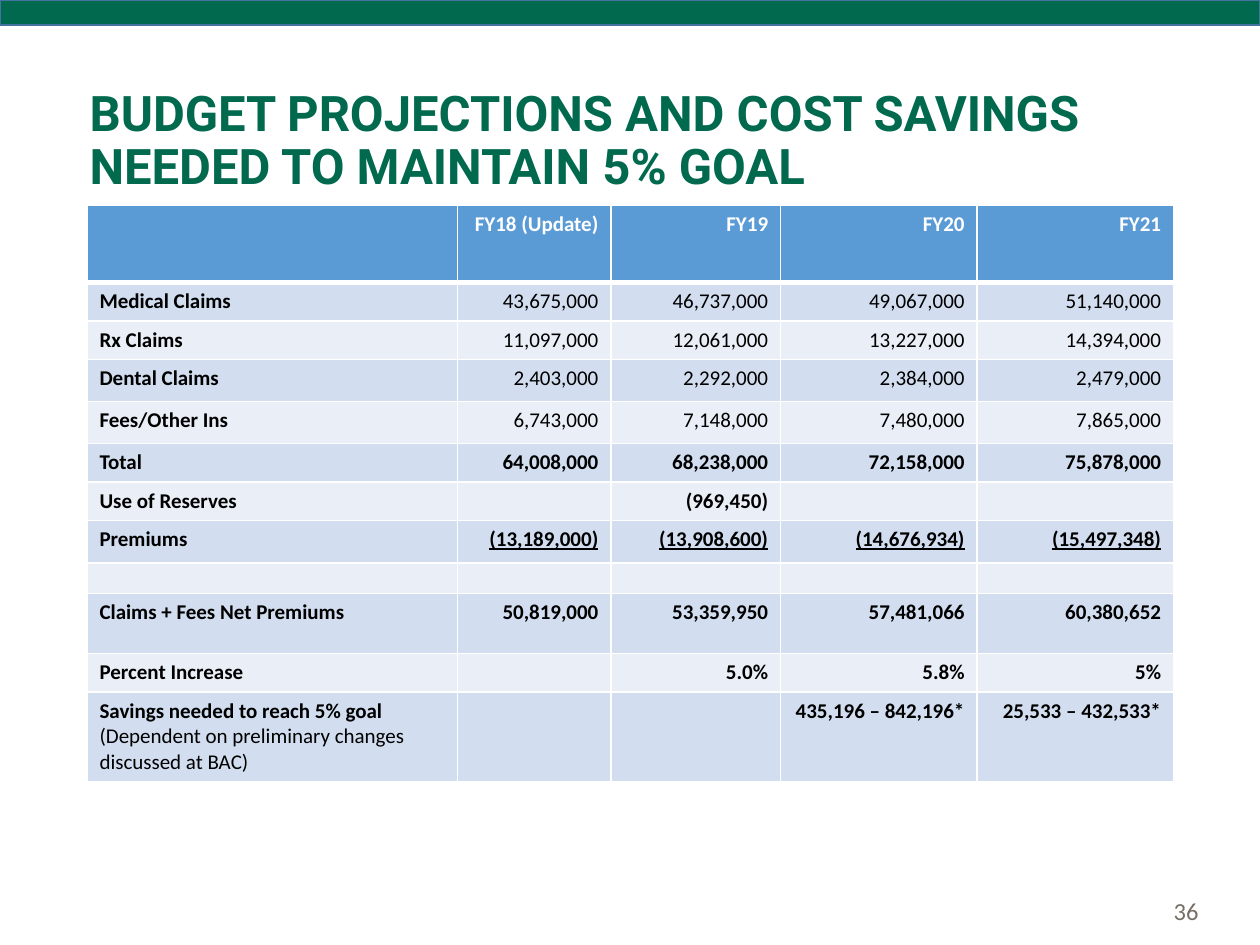
from lxml.etree import SubElement
from pptx import Presentation
from pptx.dml.color import RGBColor
from pptx.enum.shapes import MSO_SHAPE
from pptx.enum.text import MSO_ANCHOR, PP_ALIGN
from pptx.oxml.ns import qn
from pptx.util import Pt

GREEN = RGBColor(0x00, 0x69, 0x4E)
BAR_LINE = RGBColor(0x43, 0x73, 0x9E)
HEADER_BLUE = RGBColor(0x5B, 0x9B, 0xD5)
BAND_DARK = RGBColor(0xD2, 0xDE, 0xEF)
BAND_LIGHT = RGBColor(0xEA, 0xEF, 0xF7)
WHITE = RGBColor(0xFF, 0xFF, 0xFF)
BLACK = RGBColor(0x00, 0x00, 0x00)
GREY = RGBColor(0x77, 0x6F, 0x67)

TITLE = "BUDGET PROJECTIONS AND COST SAVINGS NEEDED TO MAINTAIN 5% GOAL"
SAVINGS_NOTE = "(Dependent on preliminary changes discussed at BAC)"
COLUMN_WIDTHS = [211.7, 87.8, 97, 112.3, 112.3]
# Row height, then the cells from left to right
ROWS = [
    (44.4, ["", "FY18 (Update)", "FY19", "FY20", "FY21"]),
    (22, ["Medical Claims", "43,675,000", "46,737,000", "49,067,000", "51,140,000"]),
    (22, ["Rx Claims", "11,097,000", "12,061,000", "13,227,000", "14,394,000"]),
    (24, ["Dental Claims", "2,403,000", "2,292,000", "2,384,000", "2,479,000"]),
    (24, ["Fees/Other Ins", "6,743,000", "7,148,000", "7,480,000", "7,865,000"]),
    (22, ["Total", "64,008,000", "68,238,000", "72,158,000", "75,878,000"]),
    (22, ["Use of Reserves", "", "(969,450)", "", ""]),
    (24.5, ["Premiums", "(13,189,000)", "(13,908,600)", "(14,676,934)", "(15,497,348)"]),
    (17.2, ["", "", "", "", ""]),
    (34.3, ["Claims + Fees Net Premiums", "50,819,000", "53,359,950", "57,481,066", "60,380,652"]),
    (22, ["Percent Increase", "", "5.0%", "5.8%", "5%"]),
    (51, ["Savings needed to reach 5% goal ", "", "", "435,196 – 842,196*", "25,533 – 432,533*"]),
]
PLAIN_ROWS = range(1, 5)
PREMIUMS_ROW = 7


def style_font(font, name, size, color, bold=False):
    font.name, font.size, font.bold = name, Pt(size), bold
    font.color.rgb = color


def set_borders(cell, bottom_width):
    properties = cell._tc.get_or_add_tcPr()
    for side, width in (("L", 1), ("R", 1), ("T", 1), ("B", bottom_width)):
        line = SubElement(properties, qn(f"a:ln{side}"), w=str(Pt(width)))
        fill = SubElement(line, qn("a:solidFill"))
        SubElement(fill, qn("a:srgbClr"), val=str(WHITE))


def fill_cell(cell, text, row, column):
    set_borders(cell, 1 if row else 3)
    cell.fill.solid()
    cell.fill.fore_color.rgb = (BAND_DARK if row % 2 else BAND_LIGHT) if row else HEADER_BLUE
    paragraph = cell.text_frame.paragraphs[0]
    if not text:
        # Small end mark, so that an empty cell does not stretch its row
        SubElement(paragraph._p, qn("a:endParaRPr"), sz="800")
        return
    paragraph.text = text
    paragraph.alignment = PP_ALIGN.RIGHT if column else PP_ALIGN.LEFT
    font = paragraph.runs[0].font
    bold = column == 0 or row not in PLAIN_ROWS
    style_font(font, "Calibri", 12, BLACK if row else WHITE, bold)
    if row == PREMIUMS_ROW and column:
        font.underline = True


def add_budget_table(slide):
    heights = [height for height, _ in ROWS]
    table = slide.shapes.add_table(len(ROWS), len(COLUMN_WIDTHS), Pt(49.7), Pt(117),
                                   Pt(sum(COLUMN_WIDTHS)), Pt(sum(heights))).table
    for column, width in zip(table.columns, COLUMN_WIDTHS):
        column.width = Pt(width)
    for row, (height, texts) in enumerate(ROWS):
        table.rows[row].height = Pt(height)
        for column, text in enumerate(texts):
            fill_cell(table.cell(row, column), text, row, column)
    note = table.cell(len(ROWS) - 1, 0).text_frame.paragraphs[0].add_run()
    note.text = SAVINGS_NOTE
    style_font(note.font, "Calibri", 12, BLACK)


def add_bar(slide):
    bar = slide.shapes.add_shape(MSO_SHAPE.RECTANGLE, 0, 0, Pt(720), Pt(14.4))
    bar.shadow.inherit = False
    bar.fill.solid()
    bar.fill.fore_color.rgb = GREEN
    bar.line.color.rgb = BAR_LINE
    bar.line.width = Pt(1)


def add_page_number(slide):
    box = slide.shapes.add_textbox(Pt(476), Pt(506.2), Pt(216), Pt(28.8))
    frame = box.text_frame
    frame.word_wrap = True
    frame.vertical_anchor = MSO_ANCHOR.MIDDLE
    frame.text = "36"
    frame.paragraphs[0].alignment = PP_ALIGN.RIGHT
    style_font(frame.paragraphs[0].runs[0].font, "Calibri", 14, GREY)


def set_title(slide):
    title = slide.shapes.title
    title.left, title.top, title.width, title.height = Pt(44), Pt(28.8), Pt(620.6), Pt(104.4)
    frame = title.text_frame
    frame.text = TITLE
    frame.word_wrap = True
    frame.vertical_anchor = MSO_ANCHOR.MIDDLE
    paragraph = frame.paragraphs[0]
    paragraph.alignment = PP_ALIGN.LEFT
    paragraph.line_spacing = 0.9
    style_font(paragraph.runs[0].font, "Roboto", 28, GREEN, True)


def main():
    presentation = Presentation()
    presentation.slide_width, presentation.slide_height = Pt(720), Pt(540)
    slide = presentation.slides.add_slide(presentation.slide_layouts[5])
    add_bar(slide)
    set_title(slide)
    add_budget_table(slide)
    add_page_number(slide)
    presentation.save("out.pptx")


if __name__ == "__main__":
    main()
